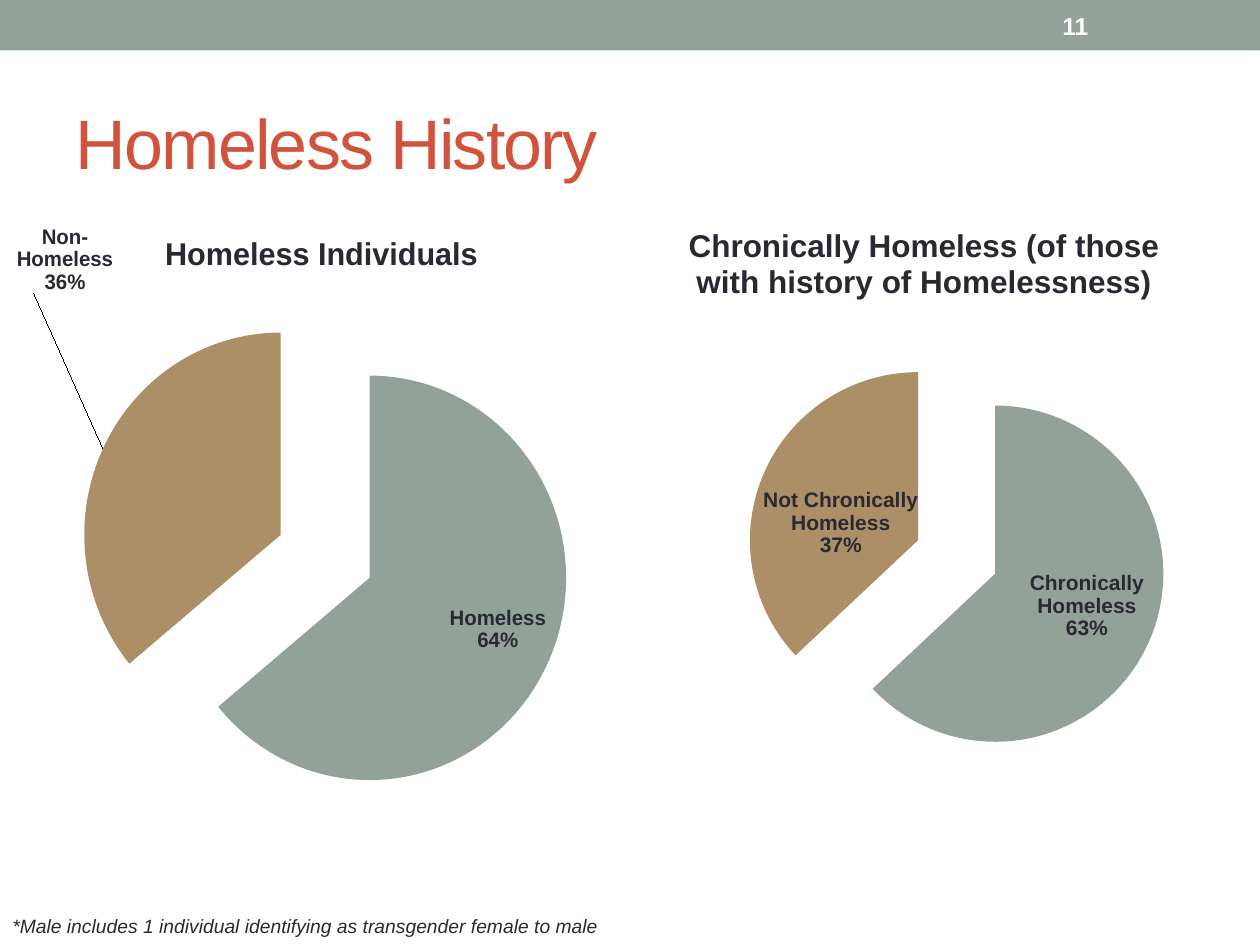
from copy import deepcopy

from pptx import Presentation
from pptx.chart.data import CategoryChartData
from pptx.dml.color import RGBColor
from pptx.enum.chart import XL_CHART_TYPE, XL_LABEL_POSITION
from pptx.enum.shapes import MSO_SHAPE
from pptx.enum.text import MSO_ANCHOR, PP_ALIGN
from pptx.oxml import parse_xml
from pptx.oxml.ns import nsdecls
from pptx.util import Pt

SAGE, TAN, RUST, DARK, WHITE = "93A299", "AD8F67", "D2533C", "292934", "FFFFFF"


def color(value):
    """Turn a hex string into a colour."""
    return RGBColor.from_string(value)


def set_font(font, size, value, bold=False, italic=False):
    """Format a font in Arial."""
    font.name = "Arial"
    font.size = Pt(size)
    font.bold = bold
    font.italic = italic
    font.color.rgb = color(value)


def place(shape, left, top, width, height):
    """Set the position and size of a shape."""
    shape.left, shape.top = Pt(left), Pt(top)
    shape.width, shape.height = Pt(width), Pt(height)


def add_band(slide):
    """Add the coloured band along the top edge."""
    band = slide.shapes.add_shape(MSO_SHAPE.RECTANGLE, 0, 0, Pt(720), Pt(28.8))
    band.shadow.inherit = False
    band.fill.solid()
    band.fill.fore_color.rgb = color(SAGE)
    band.line.fill.background()


def add_title(slide, text):
    """Fill and format the title placeholder."""
    title = slide.shapes.title
    place(title, 36, 42, 648, 78)
    title.text_frame.text = text
    title.text_frame.vertical_anchor = MSO_ANCHOR.MIDDLE
    paragraph = title.text_frame.paragraphs[0]
    paragraph.alignment = PP_ALIGN.LEFT
    set_font(paragraph.font, 40, RUST)
    paragraph.runs[0].font._element.set("spc", "-100")


def add_text(slide, text, box, size, value, anchor=MSO_ANCHOR.TOP, **style):
    """Add a one-paragraph text box."""
    frame = slide.shapes.add_textbox(*map(Pt, box)).text_frame
    frame.word_wrap = True
    frame.vertical_anchor = anchor
    frame.text = text
    set_font(frame.paragraphs[0].font, size, value, **style)


def manual_layout(x, y, size=None):
    """Build a manual layout; a given size makes it an inner plot area."""
    values = [("layoutTarget", "inner")] if size else []
    if size or size is None:
        values += [("xMode", "edge"), ("yMode", "edge")]
    values += [("x", x), ("y", y)]
    if size:
        values += zip("wh", size)
    items = "".join(f'<c:{name} val="{value}"/>' for name, value in values)
    return parse_xml(
        f'<c:layout {nsdecls("c")}><c:manualLayout>{items}</c:manualLayout></c:layout>'
    )


def remove_layout(element):
    """Drop the automatic layout of a chart element."""
    for layout in element.xpath("./c:layout"):
        element.remove(layout)


def add_pie(slide, title, shares, box):
    """Add an exploded pie with category and percentage labels."""
    data = CategoryChartData()
    data.categories = list(shares)
    data.add_series("Series 1", shares.values())
    chart = slide.shapes.add_chart(XL_CHART_TYPE.PIE, *map(Pt, box), data).chart
    set_font(chart.font, 10, DARK)
    chart.has_legend = False
    chart.has_title = True
    chart.chart_title.text_frame.text = title
    set_font(chart.chart_title.text_frame.paragraphs[0].font, 18, DARK, bold=True)
    chart.plots[0].vary_by_categories = True
    series = chart.plots[0].series[0]
    for index, value in enumerate((SAGE, TAN)):
        fill = series.points[index].format.fill
        fill.solid()
        fill.fore_color.rgb = color(value)
    explosion = parse_xml(f'<c:explosion {nsdecls("c")} val="25"/>')
    series._element.xpath("./c:dPt")[0].addprevious(explosion)
    for point_fill in series._element.xpath("./c:dPt/c:spPr"):
        point_fill.addprevious(deepcopy(explosion))
    labels = series.data_labels
    labels.show_value = False
    labels.show_category_name = labels.show_percentage = True
    labels.position = XL_LABEL_POSITION.BEST_FIT
    set_font(labels.font, 12, DARK, bold=True)
    separator = parse_xml(f'<c:separator {nsdecls("c")}>\n</c:separator>')
    labels._element.xpath("./c:showBubbleSize")[0].addnext(separator)
    return chart


def move_label(chart, index, x, y):
    """Offset one slice label, keeping the format of the others."""
    labels = chart.plots[0].series[0].data_labels._element
    label = parse_xml(f'<c:dLbl {nsdecls("c")}><c:idx val="{index}"/></c:dLbl>')
    label.append(manual_layout(x, y, size=()))
    for child in labels.xpath("./*[not(self::c:showLeaderLines)]"):
        label.append(deepcopy(child))
    labels.insert(0, label)


def arrange_pie(chart, title_at, plot_at, plot_size):
    """Place the title and the plot area of a pie."""
    title = chart.chart_title._element
    remove_layout(title)
    title.xpath("./c:tx")[0].addnext(manual_layout(*title_at))
    plot_area = chart._chartSpace.xpath("./c:chart/c:plotArea")[0]
    remove_layout(plot_area)
    plot_area.insert(0, manual_layout(*plot_at, size=plot_size))


def main():
    """Build the slide and save it."""
    presentation = Presentation()
    presentation.slide_width, presentation.slide_height = Pt(720), Pt(540)
    slide = presentation.slides.add_slide(presentation.slide_layouts[5])
    add_band(slide)
    add_title(slide, "Homeless History")
    add_text(slide, "11", (600, 1.5, 84, 26), 14, WHITE, MSO_ANCHOR.MIDDLE, bold=True)
    add_text(
        slide,
        "*Male includes 1 individual identifying as transgender female to male",
        (0, 519, 690, 21), 11, DARK, italic=True,
    )
    add_pie(
        slide,
        "Chronically Homeless (of those with history of Homelessness)",
        {"Chronically Homeless": 63, "Not Chronically Homeless": 37},
        (345, 114, 366, 384),
    )
    history = add_pie(
        slide,
        "Homeless Individuals",
        {"Homeless": 64, "Non-Homeless": 36},
        (0, 114, 336, 396),
    )
    arrange_pie(history, (0.25, 0.04), (0.11, 0.11), (0.86, 0.81))
    move_label(history, 1, -0.11, -0.22)
    presentation.save("out.pptx")


if __name__ == "__main__":
    main()
